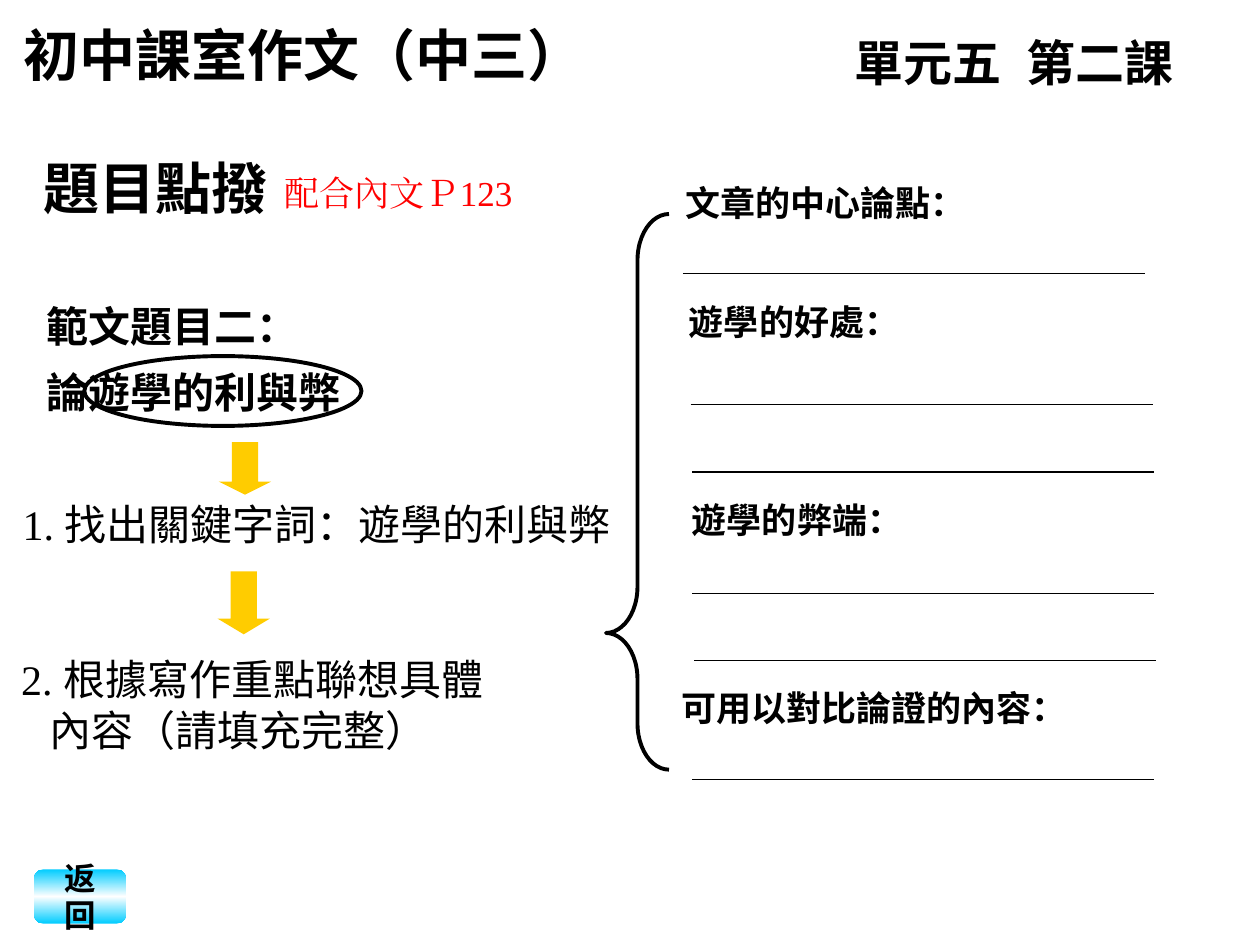
from copy import deepcopy
from dataclasses import dataclass

from lxml import etree
from pptx import Presentation
from pptx.dml.color import RGBColor
from pptx.enum import shapes, text
from pptx.oxml import ns
from pptx.util import Pt


@dataclass(frozen=True)
class Theme:
    """Colours, fonts and type sizes of the lesson."""
    ink: str = "000000"
    note: str = "FF0000"
    arrow: str = "FFCC00"
    button: str = "00CCFF"
    button_glow: str = "FFFFFF"
    header_font: str = "Cabin"
    title_font: str = "Arial"
    body_font: str = "DejaVu Sans"
    number_font: str = "Times New Roman"
    title: int = 32
    unit: int = 28
    body: int = 24
    small: int = 20
    label: int = 18
    outline: float = 2.25
    rule: float = 0.75


THEME = Theme()
KIND = shapes.MSO_SHAPE


def colour(value):
    """Turn a hex string into a colour."""
    return RGBColor.from_string(value)


def add_span(para, words, size, font, bold=False, ink=THEME.ink):
    """Add one run, with its font set for Latin and Chinese alike."""
    span = para.add_run()
    span.text = words
    span.font.size = Pt(size)
    span.font.bold = bold
    span.font.color.rgb = colour(ink)
    span.font.name = font
    etree.SubElement(span.font._element, ns.qn("a:ea"), typeface=font)


def add_text(page, box, paragraphs, spacing=None):
    """Add a wrapping text box; each paragraph is a list of run settings."""
    frame = page.shapes.add_textbox(*map(Pt, box)).text_frame
    frame.word_wrap = True
    frame.auto_size = text.MSO_AUTO_SIZE.SHAPE_TO_FIT_TEXT
    for index, spans in enumerate(paragraphs):
        para = frame.add_paragraph() if index else frame.paragraphs[0]
        if spacing:
            para.line_spacing = spacing
        for span in spans:
            add_span(para, *span)
    return frame


def add_figure(page, kind, box, fill=None, line=None, adjustments=()):
    """Add a preset shape with an optional fill and outline."""
    shape = page.shapes.add_shape(kind, *map(Pt, box))
    shape.shadow.inherit = False
    for index, value in enumerate(adjustments):
        shape.adjustments[index] = value
    if fill:
        shape.fill.solid()
        shape.fill.fore_color.rgb = colour(fill)
    else:
        shape.fill.background()
    if line:
        shape.line.color.rgb = colour(line)
        shape.line.width = Pt(THEME.outline)
    else:
        shape.line.fill.background()
    return shape


def add_rule(page, left, top, width):
    """Draw one line to write on."""
    rule = page.shapes.add_connector(
        shapes.MSO_CONNECTOR.STRAIGHT, Pt(left), Pt(top), Pt(left + width), Pt(top))
    rule.line.color.rgb = colour(THEME.ink)
    rule.line.width = Pt(THEME.rule)
    etree.SubElement(rule._element.spPr, ns.qn("a:effectLst"))


def indent(para, left, first=0):
    """Set the left margin and first-line indent of a paragraph."""
    properties = para._p.get_or_add_pPr()
    properties.set("marL", str(Pt(left)))
    properties.set("indent", str(Pt(first)))


def add_header(page, left, top, width):
    """Place the course name and, at the right, the unit and lesson."""
    add_text(page, (left, top, 376, 45),
             [[("初中課室作文（中三）", THEME.title, THEME.header_font, True)]])
    frame = add_text(page, (left + width - 241, top + 7, 241, 41),
                     [[("單元五\t第二課", THEME.unit, THEME.header_font, True)]])
    properties = frame.paragraphs[0]._p.get_or_add_pPr()
    tabs = etree.SubElement(properties, ns.qn("a:tabLst"))
    etree.SubElement(tabs, ns.qn("a:tab"), pos=str(Pt(98)), algn="l")


def add_topic(page, left, top):
    """Place the section title, page note and circled essay topic."""
    add_text(page, (left, top, 222, 45),
             [[("題目點撥", THEME.title, THEME.title_font, True)]])
    add_text(page, (left + 137.5, top + 10, 178, 31),
             [[("配合內文Ｐ123", THEME.small, THEME.number_font, False, THEME.note)]])
    add_text(page, (left + 1.5, top + 75.5, 360, 82),
             [[(words, THEME.body, THEME.body_font, True)]
              for words in ("範文題目二：", "論遊學的利與弊")], 1.3)
    add_figure(page, KIND.OVAL, (left + 30.2, top + 119.3, 158.4, 39.9), line=THEME.ink)


def add_steps(page, left, top):
    """Place the two numbered steps, each below its arrow."""
    for x, y, height, head in ((120, 0, 30, 0.25), (119.3, 73.8, 36, 0.3)):
        add_figure(page, KIND.DOWN_ARROW, (left + x, top + y, 30, height),
                   THEME.arrow, adjustments=(0.5, head))

    def numbered(number, words):
        """Give the runs of a numbered line."""
        return [(number, THEME.body, THEME.number_font),
                (words, THEME.body, THEME.body_font)]

    first = add_text(page, (left + 0.8, top + 28.8, 371.5, 36),
                     [numbered("1. ", "找出關鍵字詞：遊學的利與弊")])
    indent(first.paragraphs[0], 27, -27)
    second = add_text(page, (left, top + 117.4, 300, 65),
                      [numbered("2. ", "根據寫作重點聯想具體"),
                       [("內容（請填充完整）", THEME.body, THEME.body_font)]])
    indent(second.paragraphs[1], 16)


def add_answers(page, left, top):
    """Place the brace, the four headings and the lines to fill in."""
    add_figure(page, KIND.LEFT_BRACE, (left, top + 22.3, 36, 317.5),
               line=THEME.ink, adjustments=(0.735, 0.754))
    sections = (
        ("文章的中心論點：", 38.2, 0, ((43.9, 56.2),)),
        ("遊學的好處：", 40.3, 68, ((48.3, 131.1), (49.4, 169.7))),
        ("遊學的弊端：", 42, 181.5, ((49.4, 239), (50.5, 277.3))),
        ("可用以對比論證的內容：", 36, 288.8, ((49.4, 345.6),)),
    )
    for heading, x, y, rules in sections:
        add_text(page, (left + x, top + y, 276, 31),
                 [[(heading, THEME.small, THEME.body_font, True)]])
        for rule_x, rule_y in rules:
            add_rule(page, left + rule_x, top + rule_y, 264)


def add_return_button(page, box):
    """Place the return button with its banded gradient."""
    button = add_figure(page, KIND.FLOWCHART_ALTERNATE_PROCESS, box)
    button.fill.gradient()
    button.fill.gradient_angle = 90
    stop_list = button._element.spPr.find(".//" + ns.qn("a:gsLst"))
    stop_list.append(deepcopy(stop_list[-1]))
    shades = (THEME.button, THEME.button_glow, THEME.button)
    for index, (stop, shade) in enumerate(zip(button.fill.gradient_stops, shades)):
        stop.position = index / 2
        stop.color.rgb = colour(shade)
    frame = button.text_frame
    frame.word_wrap = True
    frame.vertical_anchor = text.MSO_ANCHOR.MIDDLE
    para = frame.paragraphs[0]
    para.alignment = text.PP_ALIGN.CENTER
    add_span(para, "返回", THEME.label, THEME.title_font, True)


def main():
    """Build the slide and save it."""
    deck = Presentation()
    deck.slide_width, deck.slide_height = Pt(720), Pt(540)
    page = deck.slides.add_slide(deck.slide_layouts[6])
    add_header(page, 6.5, 8, 716)
    add_topic(page, 18, 84.2)
    add_steps(page, 5, 252.7)
    add_answers(page, 346.3, 100)
    add_return_button(page, (19.5, 496.8, 52.5, 31))
    deck.save("out.pptx")


if __name__ == "__main__":
    main()
